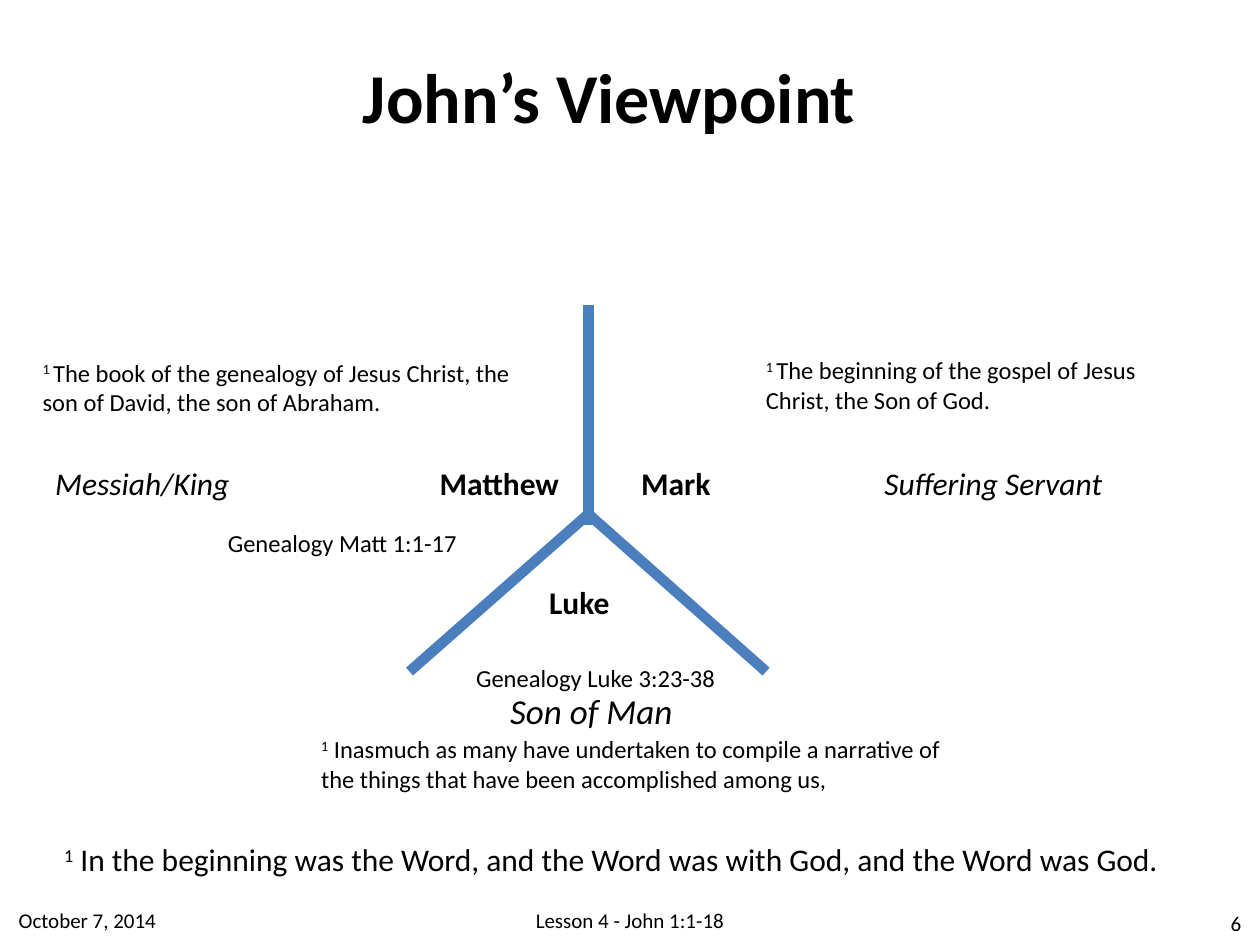
"""Build the slide that compares the viewpoints of the Gospels."""
from lxml import etree
from pptx import Presentation
from pptx.dml.color import RGBColor
from pptx.enum import shapes, text
from pptx.oxml import ns
from pptx.util import Inches, Pt

COLORS = {"text": "000000", "line": "4B7EBC"}
FONT = "Calibri"
HUB = (4.67, 4.08)
SPOKES = [((4.67, 2.42), (4.67, 4.17)), (HUB, (6.08, 5.33)), (HUB, (3.25, 5.33))]
GOSPELS = [
    ("Mark", (4.99, 3.63, 0.76, 0.4)),
    ("Luke", (4.26, 4.58, 0.68, 0.4)),
    ("Matthew", (3.39, 3.63, 1.16, 0.4)),
]
ROLES = [
    ("Suffering Servant", (6.92, 3.63, 1.96, 0.4), 18),
    ("Son of Man", (3.95, 5.42, 1.51, 0.44), 20),
    ("Messiah/King", (0.34, 3.63, 1.6, 0.4), 18),
]
GENEALOGIES = [
    ("Genealogy Luke 3:23-38", (3.68, 5.21, 2.25, 0.34)),
    ("Genealogy Matt 1:1-17", (1.71, 4.14, 2.25, 0.34)),
]
VERSES = [
    ("1", " In the beginning was the Word, and the Word was with God, "
     "and the Word was God.", (0.41, 6.62, 9.05, 0.4), 18, False),
    ("1 ", "The book of the genealogy of Jesus Christ, the son of David, "
     "the son of Abraham.", (0.24, 2.79, 4.08, 0.57), 14, True),
    ("1 ", "The beginning of the gospel of Jesus Christ, the Son of God.",
     (5.98, 2.77, 3.22, 0.57), 14, True),
    ("1", " Inasmuch as many have undertaken to compile a narrative of "
     "the things that have been accomplished among us,",
     (2.45, 5.78, 5.22, 0.57), 14, True),
]
FOOTERS = [
    ("Lesson 4 - John 1:1-18", (1.71, 7.1, 6.58, 0.4), text.PP_ALIGN.CENTER),
    ("October 7, 2014", (0.05, 7.1, 2.03, 0.4), text.PP_ALIGN.LEFT),
    ("6", (9.2, 7.13, 0.75, 0.4), text.PP_ALIGN.RIGHT),
]


def style_span(span, size, bold=False, italic=False):
    """Set the font of one run."""
    font = span.font
    font.name, font.size = FONT, Pt(size)
    font.bold, font.italic = bold, italic
    font.color.rgb = RGBColor.from_string(COLORS["text"])


def add_title(page, wording):
    """Place and format the title placeholder."""
    title = page.shapes.title
    title.left, title.top = Inches(2.09), Inches(0.37)
    title.width, title.height = Inches(5.49), Inches(0.77)
    frame = title.text_frame
    frame.text = wording
    frame.auto_size = text.MSO_AUTO_SIZE.NONE
    frame.vertical_anchor = text.MSO_ANCHOR.MIDDLE
    frame.paragraphs[0].alignment = text.PP_ALIGN.CENTER
    style_span(frame.paragraphs[0].runs[0], 40, bold=True)


def add_label(page, wording, area, size, wrap=True, **style):
    """Add a one-paragraph text box and return it."""
    box = page.shapes.add_textbox(*map(Inches, area))
    frame = box.text_frame
    frame.text = wording
    frame.word_wrap = wrap
    style_span(frame.paragraphs[0].runs[0], size, **style)
    return box


def add_verse(page, number, wording, area, size, wrap):
    """Add a verse that opens with its raised number."""
    box = add_label(page, number, area, size, wrap)
    para = box.text_frame.paragraphs[0]
    para.runs[0].font._element.set("baseline", "30000")
    span = para.add_run()
    span.text = wording
    style_span(span, size)


def add_footer(page, wording, area, alignment):
    """Add a small label at the foot of the slide."""
    frame = add_label(page, wording, area, 12).text_frame
    frame.vertical_anchor = text.MSO_ANCHOR.MIDDLE
    frame.paragraphs[0].alignment = alignment


def add_spoke(page, start, end):
    """Add one thick line of the three-way divider."""
    spoke = page.shapes.add_connector(
        shapes.MSO_CONNECTOR.STRAIGHT, *map(Inches, start + end))
    spoke.line.width = Pt(6)
    spoke.line.color.rgb = RGBColor.from_string(COLORS["line"])
    etree.SubElement(spoke._element.spPr, ns.qn("a:effectLst"))


def main():
    """Build and save the deck."""
    deck = Presentation()
    deck.slide_width, deck.slide_height = Inches(10), Inches(7.5)
    page = deck.slides.add_slide(deck.slide_layouts.get_by_name("Title Only"))
    add_title(page, "John’s Viewpoint")
    for start, end in SPOKES:
        add_spoke(page, start, end)
    for name, area in GOSPELS:
        add_label(page, name, area, 18, wrap=False, bold=True)
    for verse in VERSES:
        add_verse(page, *verse)
    for wording, area in GENEALOGIES:
        add_label(page, wording, area, 14)
    for role, area, size in ROLES:
        add_label(page, role, area, size, wrap=False, italic=True)
    for footer in FOOTERS:
        add_footer(page, *footer)
    deck.save("out.pptx")


if __name__ == "__main__":
    main()
